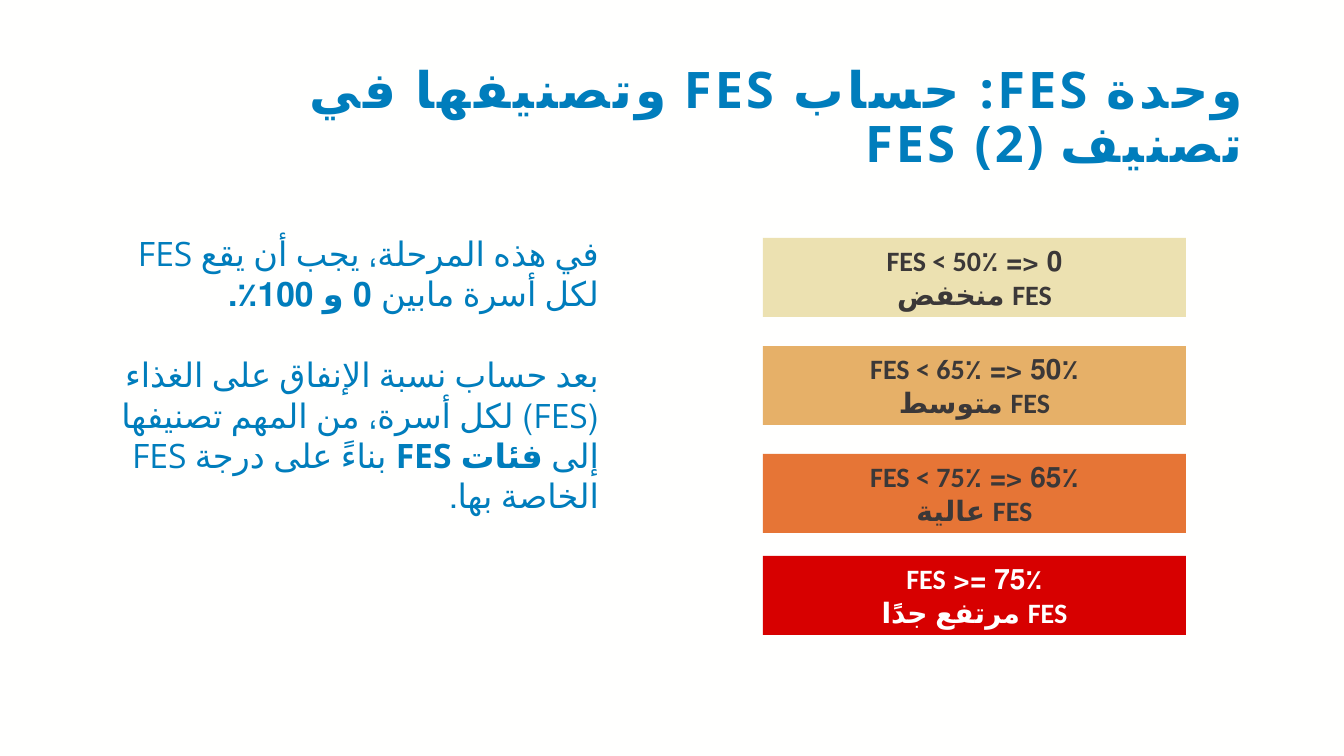
from pptx import Presentation
from pptx.dml.color import RGBColor
from pptx.enum.lang import MSO_LANGUAGE_ID
from pptx.enum.shapes import MSO_SHAPE
from pptx.enum.text import MSO_ANCHOR, PP_ALIGN
from pptx.oxml.ns import qn
from pptx.util import Pt
from lxml import etree

RECT = MSO_SHAPE.RECTANGLE
TOP, MIDDLE = MSO_ANCHOR.TOP, MSO_ANCHOR.MIDDLE
RIGHT, CENTER = PP_ALIGN.RIGHT, PP_ALIGN.CENTER
ARABIC = MSO_LANGUAGE_ID.ARABIC

THEME = {
    "bg": "FFFFFE", "blue": "007DBC", "dark": "3B3838", "white": "FFFFFF",
    "low": "ECE1B1", "medium": "E6B068", "high": "E67536", "very_high": "D70000",
    "heading_font": "Open Sans", "label_font": "Calibri",
    "title": 36, "body": 24, "label": 20,
}
W, H = 1344, 756
SCALE = 12192000 / W


def px(*lengths):
    return [round(n * SCALE) for n in lengths]


def write(s, paragraphs, size, color, font, align=RIGHT, anchor=TOP,
          line=None, gap=0, spacing=None, cs_font=None):
    """Fill s with right-to-left paragraphs, each a list of (text, bold) runs."""
    tf = s.text_frame
    tf.word_wrap = True
    tf.vertical_anchor = anchor
    for i, runs in enumerate(paragraphs):
        p = tf.add_paragraph() if i else tf.paragraphs[0]
        p.alignment = align
        p._p.get_or_add_pPr().set("rtl", "1")
        if line:
            p.line_spacing = line
        if i and gap:
            p.space_before = Pt(gap)
        for text, bold in runs:
            r = p.add_run()
            r.text = text
            r.font.size = Pt(size)
            r.font.bold = bold
            r.font.name = font
            r.font.language_id = ARABIC
            r.font.color.rgb = RGBColor.from_string(color)
            rpr = r._r.get_or_add_rPr()
            if spacing:
                rpr.set("spc", str(spacing))
            if cs_font:
                etree.SubElement(rpr, qn("a:cs")).set("typeface", cs_font)
    return tf


prs = Presentation()
prs.slide_width, prs.slide_height = px(W, H)
slide = prs.slides.add_slide(prs.slide_layouts[6])
slide.background.fill.solid()
slide.background.fill.fore_color.rgb = RGBColor.from_string(THEME["bg"])

# Title
s = slide.shapes.add_textbox(*px(94, 56, 1162, 127))
tf = write(s, [[("وحدة FES: حساب FES وتصنيفها في تصنيف FES (2)", True)]],
           THEME["title"], THEME["blue"], THEME["heading_font"], anchor=MIDDLE,
           line=0.9, spacing=230, cs_font=THEME["heading_font"])
tf.margin_left = px(40)[0]

# Explanation
s = slide.shapes.add_textbox(*px(104, 228, 505, 254))
write(s, [
    [("في هذه المرحلة، يجب أن يقع FES لكل أسرة مابين", False),
     (" 0 و 100٪.", True)],
    [("بعد حساب نسبة الإنفاق على الغذاء (FES) لكل أسرة، من المهم تصنيفها إلى ", False),
     ("فئات FES ", True),
     ("بناءً على درجة FES الخاصة بها.", False)],
], THEME["body"], THEME["blue"], THEME["heading_font"], gap=29)

# FES categories
categories = [
    (238, "low", "dark", "0 <= FES < 50٪", "FES منخفض"),
    (346, "medium", "dark", "50٪ <= FES < 65٪", "FES متوسط"),
    (454, "high", "dark", "65٪ <= FES < 75٪", "FES عالية"),
    (556, "very_high", "white", "75٪ =< FES", "FES مرتفع جدًا"),
]
for top, fill, color, limits, name in categories:
    s = slide.shapes.add_shape(RECT, *px(763, top, 423, 79))
    s.shadow.inherit = False
    s.fill.solid()
    s.fill.fore_color.rgb = RGBColor.from_string(THEME[fill])
    s.line.fill.background()
    write(s, [[(limits, True)], [(name, True)]], THEME["label"], THEME[color],
          THEME["label_font"], align=CENTER, anchor=MIDDLE)

prs.save("out.pptx")
